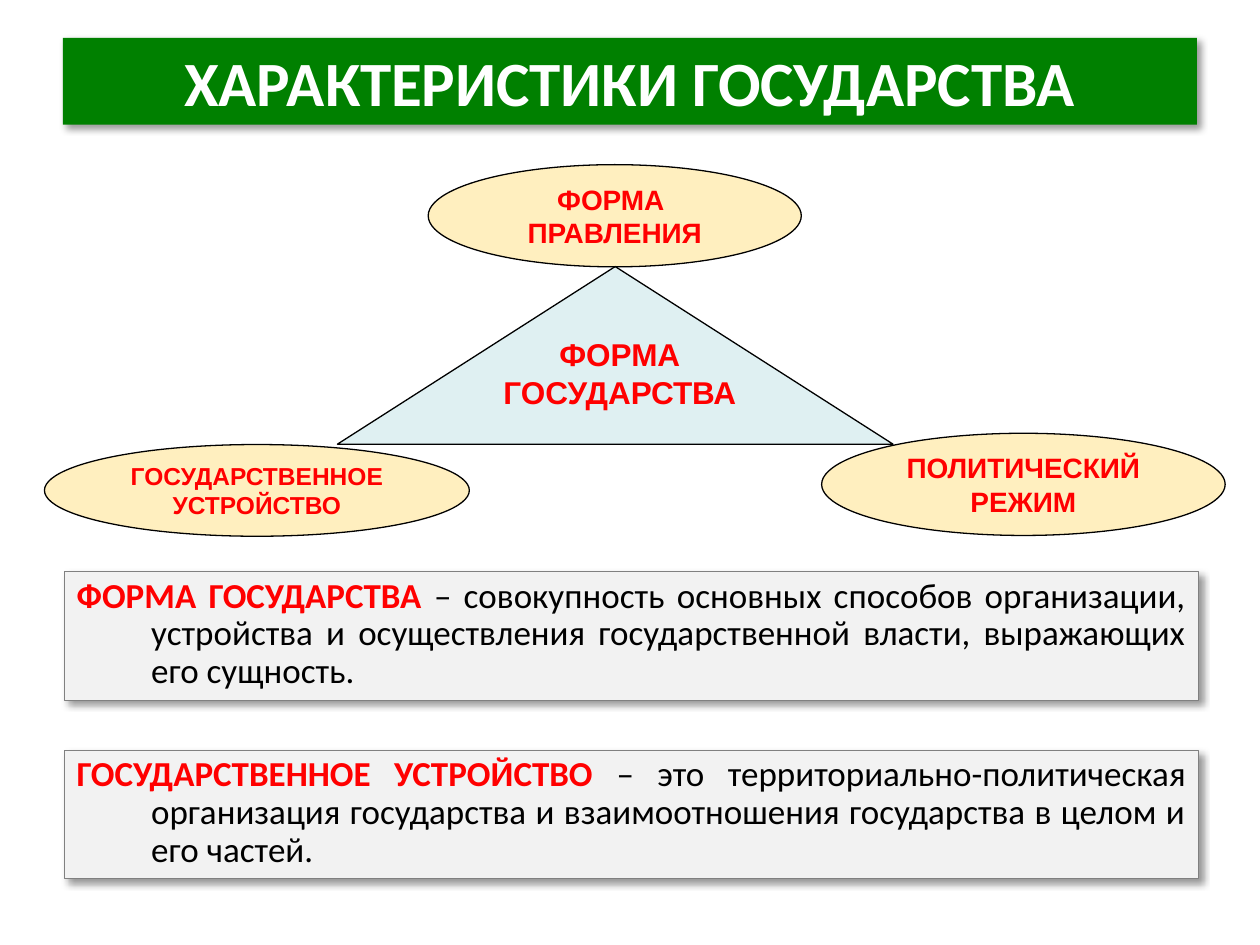
from lxml.etree import SubElement
from pptx import Presentation
from pptx.dml.color import RGBColor
from pptx.enum.shapes import MSO_SHAPE
from pptx.enum.text import MSO_ANCHOR, PP_ALIGN
from pptx.oxml.ns import qn
from pptx.util import Pt

RED, BLACK, WHITE = "FF0000", "000000", "FFFFFF"


def color(value):
    """Turn a hex string into a colour."""
    return RGBColor.from_string(value)


def add_alpha(parent, percent):
    """Set the opacity of a colour element."""
    SubElement(parent, qn("a:alpha")).set("val", str(percent * 1000))


def add_box(s, kind, box, fill, line=None, opacity=None):
    """Add a filled preset shape without a shadow."""
    sp = s.shapes.add_shape(kind, *map(Pt, box))
    sp.shadow.inherit = False
    sp.fill.solid()
    sp.fill.fore_color.rgb = color(fill)
    if opacity:
        add_alpha(sp.fill._xPr.find(qn("a:solidFill"))[0], opacity)
    if line:
        sp.line.color.rgb = color(line)
        sp.line.width = Pt(0.75)
    else:
        sp.line.fill.background()
    return sp


def add_shadow(sp):
    """Give a shape a soft shadow to the lower right."""
    effects = sp._element.spPr.find(qn("a:effectLst"))
    shadow = SubElement(effects, qn("a:outerShdw"), blurRad=str(Pt(4)),
                        dist=str(Pt(3)), dir="2700000", algn="tl", rotWithShape="0")
    add_alpha(SubElement(shadow, qn("a:srgbClr"), val=BLACK), 40)


def add_run(p, text, size, font, hex_color, bold=True):
    """Add a formatted run to a paragraph."""
    r = p.add_run()
    r.text = text
    r.font.size = Pt(size)
    r.font.name = font
    r.font.bold = bold
    r.font.color.rgb = color(hex_color)


def set_lines(sp, lines, size, font, hex_color, anchor=MSO_ANCHOR.MIDDLE):
    """Write centred bold paragraphs into a shape."""
    tf = sp.text_frame
    tf.word_wrap = True
    tf.vertical_anchor = anchor
    for i, line in enumerate(lines):
        p = tf.add_paragraph() if i else tf.paragraphs[0]
        p.alignment = PP_ALIGN.CENTER
        add_run(p, line, size, font, hex_color)


def add_title(s, text):
    """Add the green title bar."""
    sp = add_box(s, MSO_SHAPE.RECTANGLE, (36, 21.6, 648, 49.7), "008000")
    add_shadow(sp)
    set_lines(sp, [text], 36, "Calibri", WHITE)


def add_triangle(s, text):
    """Add the central triangle and its label."""
    add_box(s, MSO_SHAPE.ISOSCELES_TRIANGLE, (192.8, 152.3, 317.5, 101.5),
            "BBE0E3", BLACK, 46)
    label = s.shapes.add_textbox(Pt(267.8), Pt(187.9), Pt(172.8), Pt(45.4))
    set_lines(label, [text], 18, "Arial", RED, MSO_ANCHOR.TOP)


def add_ellipse(s, box, lines, size):
    """Add an ellipse naming one element of the form of state."""
    sp = add_box(s, MSO_SHAPE.OVAL, box, "FFC000", BLACK, 25)
    set_lines(sp, lines, size, "Arial", RED)


def add_definition(s, top, term, meaning):
    """Add a grey panel with a term and its definition."""
    sp = add_box(s, MSO_SHAPE.RECTANGLE, (36.8, top, 648, 73.5), "F2F2F2", "808080")
    add_shadow(sp)
    tf = sp.text_frame
    tf.word_wrap = True
    tf.vertical_anchor = MSO_ANCHOR.TOP
    p = tf.paragraphs[0]
    p.alignment = PP_ALIGN.JUSTIFY
    p.line_spacing = 0.9
    pPr = p._p.get_or_add_pPr()
    pPr.set("marL", str(Pt(42.5)))
    pPr.set("indent", str(-Pt(42.5)))
    add_run(p, term + " ", 20, "Calibri", RED)
    add_run(p, meaning, 20, "Calibri", BLACK, False)


def main():
    """Build the slide and save it."""
    prs = Presentation()
    prs.slide_width, prs.slide_height = Pt(720), Pt(540)
    s = prs.slides.add_slide(prs.slide_layouts[6])
    add_title(s, "ХАРАКТЕРИСТИКИ ГОСУДАРСТВА")
    add_definition(s, 326.7, "ФОРМА ГОСУДАРСТВА",
                   "– совокупность основных способов организации, устройства и "
                   "осуществления государственной власти, выражающих его сущность.")
    add_triangle(s, "ФОРМА ГОСУДАРСТВА")
    add_ellipse(s, (25.4, 254, 242.8, 52.4), ["ГОСУДАРСТВЕННОЕ", "УСТРОЙСТВО"], 14)
    add_ellipse(s, (469.5, 247.6, 230.6, 58.4), ["ПОЛИТИЧЕСКИЙ", "РЕЖИМ"], 16)
    add_ellipse(s, (244.7, 94.1, 213.2, 58.4), ["ФОРМА ", "ПРАВЛЕНИЯ"], 16)
    add_definition(s, 428.7, "ГОСУДАРСТВЕННОЕ УСТРОЙСТВО",
                   "– это территориально-политическая организация государства и "
                   "взаимоотношения государства в целом и его частей.")
    prs.save("out.pptx")


if __name__ == "__main__":
    main()
